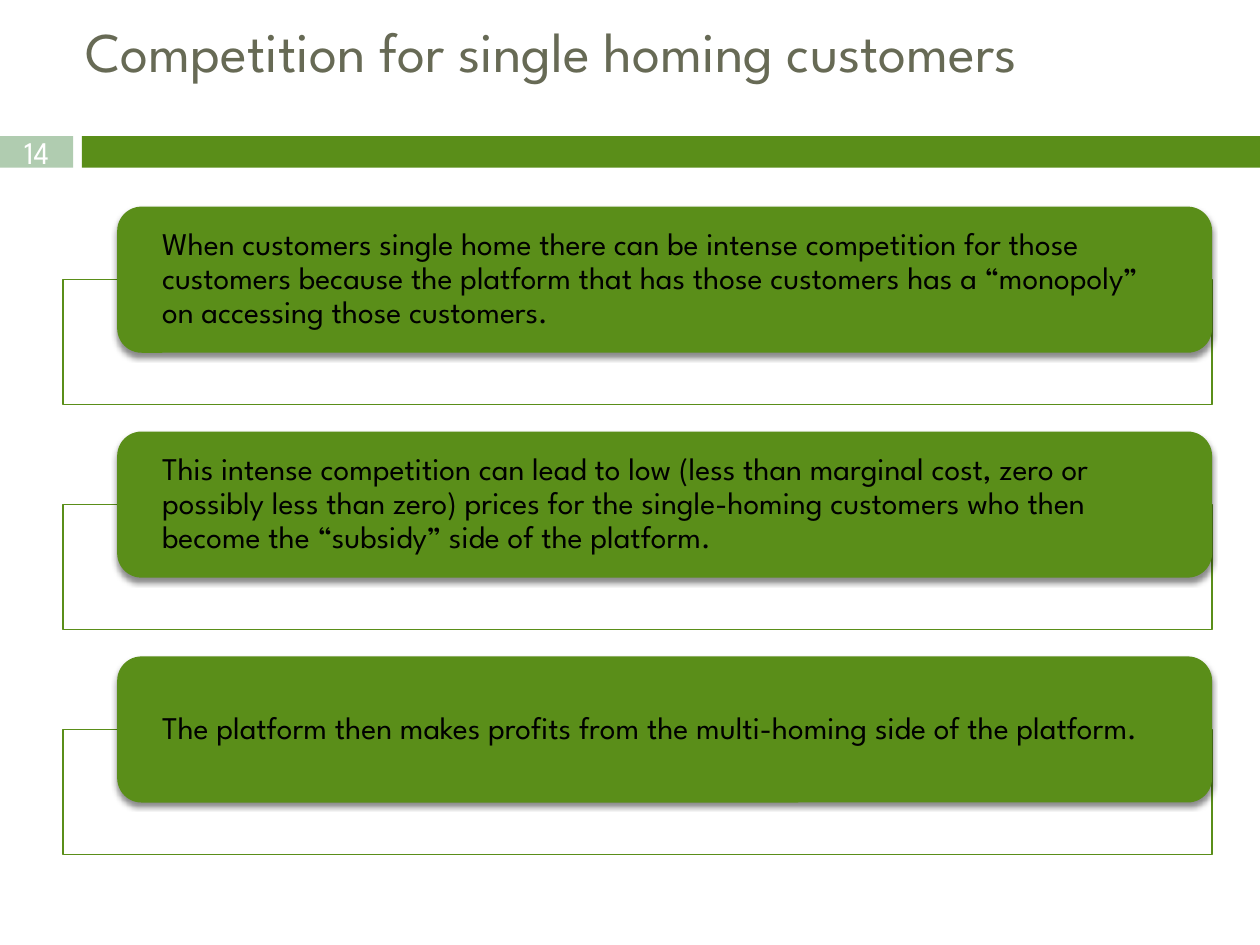
"""Build the slide on competition for single homing customers."""
from lxml import etree
from pptx import Presentation, util as u
from pptx.dml import color
from pptx.enum import shapes, text
from pptx.oxml import ns

TITLE = "Competition for single homing customers"
PAGE = "14"
POINTS = [
    "When customers single home there can be intense competition for those customers "
    "because the platform that has those customers has a “monopoly” on accessing those customers.",
    "This intense competition can lead to low (less than marginal cost, zero or possibly "
    "less than zero) prices for the single-homing customers who then become the “subsidy” "
    "side of the platform.",
    "The platform then makes profits from the multi-homing side of the platform.",
]
THEME = {
    "font": "League Spartan", "title_size": 32, "body_size": 18,
    "green": "5A8E19", "pale": "B0CCB0", "white": "FFFFFF",
    "title": "676A55", "body": "000000", "line": 0.79,
}
WIDTH, HEIGHT = 10, 7.5
BAND_TOP, BAND_HEIGHT, PAGE_WIDTH, BAND_LEFT = 1.08, 0.25, 0.58, 0.65
FRAME_LEFT, FRAME_WIDTH, FRAME_HEIGHT = 0.5, 9.12, 0.99
CARD_LEFT, CARD_WIDTH, CARD_HEIGHT = 0.93, 8.69, 1.16
FIRST_CARD, ROW_STEP = 1.64, 1.785


def rgb(name):
    return color.RGBColor.from_string(THEME[name])


def add_block(slide, kind, box, fill, line=None):
    block = slide.shapes.add_shape(kind, *map(u.Inches, box))
    block.shadow.inherit = False
    block.fill.solid()
    block.fill.fore_color.rgb = rgb(fill)
    if line:
        block.line.color.rgb = rgb(line)
        block.line.width = u.Pt(THEME["line"])
    else:
        block.line.fill.background()
    return block


def write(holder, words, size="body_size", ink="body", align=text.PP_ALIGN.LEFT,
          anchor=text.MSO_ANCHOR.MIDDLE, side=0.0, top=0.0, spacing=1.0):
    frame = holder.text_frame
    frame.word_wrap = True
    frame.vertical_anchor = anchor
    frame.margin_left = frame.margin_right = u.Inches(side)
    frame.margin_top = frame.margin_bottom = u.Inches(top)
    paragraph = frame.paragraphs[0]
    paragraph.alignment = align
    paragraph.line_spacing = spacing
    run = paragraph.add_run()
    run.text = words
    run.font.name = THEME["font"]
    run.font.size = u.Pt(THEME[size])
    run.font.color.rgb = rgb(ink)


def set_alpha(parent, percent):
    etree.SubElement(parent, ns.qn("a:alpha"), val=str(percent * 1000))


def add_shadow(block):
    effects = block._element.spPr.find(ns.qn("a:effectLst"))
    shadow = etree.SubElement(
        effects, ns.qn("a:outerShdw"), blurRad=str(u.Pt(3)), dist=str(u.Pt(2.4)),
        dir="5400000", rotWithShape="0")
    set_alpha(etree.SubElement(shadow, ns.qn("a:srgbClr"), val=THEME["body"]), 45)


def add_point(slide, row, words):
    top = FIRST_CARD + row * ROW_STEP
    frame = add_block(
        slide, shapes.MSO_SHAPE.RECTANGLE,
        (FRAME_LEFT, top + CARD_HEIGHT / 2, FRAME_WIDTH, FRAME_HEIGHT), "white", "green")
    set_alpha(frame._element.spPr.find(ns.qn("a:solidFill"))[0], 90)
    card = add_block(slide, shapes.MSO_SHAPE.ROUNDED_RECTANGLE,
                     (CARD_LEFT, top, CARD_WIDTH, CARD_HEIGHT), "green")
    add_shadow(card)
    write(card, words, side=0.3, spacing=0.9)


def main():
    deck = Presentation()
    deck.slide_width, deck.slide_height = u.Inches(WIDTH), u.Inches(HEIGHT)
    slide = deck.slides.add_slide(deck.slide_layouts[6])
    add_block(slide, shapes.MSO_SHAPE.RECTANGLE,
              (BAND_LEFT, BAND_TOP, WIDTH - BAND_LEFT, BAND_HEIGHT), "green")
    page = add_block(slide, shapes.MSO_SHAPE.RECTANGLE,
                     (0, BAND_TOP, PAGE_WIDTH, BAND_HEIGHT), "pale")
    write(page, PAGE, ink="white", align=text.PP_ALIGN.CENTER)
    heading = slide.shapes.add_textbox(
        *map(u.Inches, (PAGE_WIDTH, 0.08, WIDTH - PAGE_WIDTH, 1.01)))
    write(heading, TITLE, size="title_size", ink="title",
          anchor=text.MSO_ANCHOR.TOP, side=0.1, top=0.05)
    for row, words in enumerate(POINTS):
        add_point(slide, row, words)
    deck.save("out.pptx")


if __name__ == "__main__":
    main()
